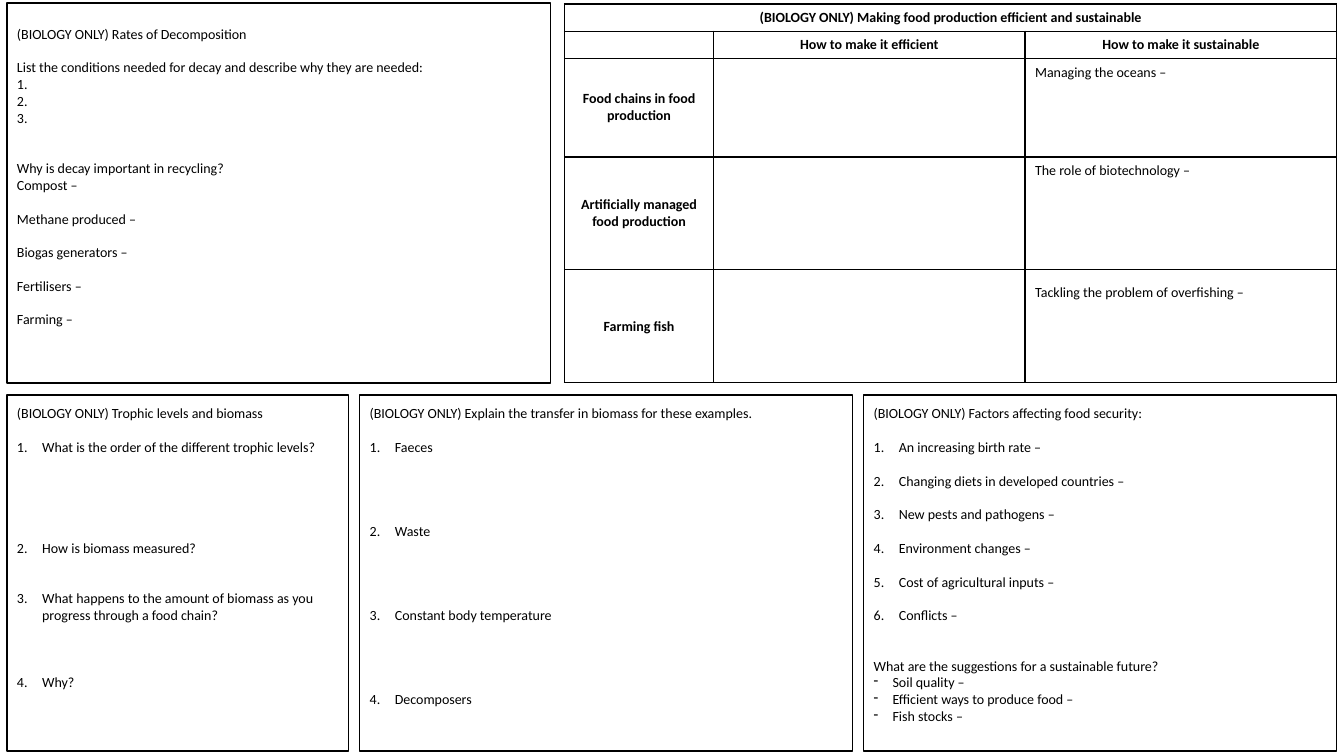
"""Build a biology revision slide with four question panels and a food production table."""
from lxml import etree
from pptx import Presentation
from pptx import util as u
from pptx.dml import color
from pptx.enum import shapes, text
from pptx.oxml import ns

BLACK, WHITE = "000000", "FFFFFF"
FONT = {"name": "Calibri", "size": u.Pt(10)}
LINE, PANEL_LINES = 12, 20
LEFT, RIGHT = 5.04, 954.7
UPPER = {"top": 2.2, "height": 271.4}
LOWER = {"top": 282.2, "height": 254.2}

BULLETS = {
    "number": (18, "a:buAutoNum", {"type": "arabicPeriod"}),
    "dash": (13.5, "a:buChar", {"char": "-"}),
}

# Each panel line: blank lines above it, bullet, wording
FACTORS = [
    (0, None, "(BIOLOGY ONLY) Factors affecting food security:"),
    (1, "number", "An increasing birth rate –"),
    (1, "number", "Changing diets in developed countries –"),
    (1, "number", "New pests and pathogens –"),
    (1, "number", "Environment changes –"),
    (1, "number", "Cost of agricultural inputs –"),
    (1, "number", "Conflicts –"),
    (2, None, "What are the suggestions for a sustainable future?"),
    (0, "dash", "Soil quality –"),
    (0, "dash", "Efficient ways to produce food –"),
    (0, "dash", "Fish stocks –"),
]
DECOMPOSITION = [
    (0, None, "(BIOLOGY ONLY) Rates of Decomposition"),
    (1, None, "List the conditions needed for decay and describe why they are needed:"),
    (0, None, "1."),
    (0, None, "2."),
    (0, None, "3."),
    (2, None, "Why is decay important in recycling?"),
    (0, None, "Compost –"),
    (1, None, "Methane produced –"),
    (1, None, "Biogas generators –"),
    (1, None, "Fertilisers –"),
    (1, None, "Farming –"),
]
TROPHIC = [
    (0, None, "(BIOLOGY ONLY) Trophic levels and biomass"),
    (1, "number", "What is the order of the different trophic levels?"),
    (5, "number", "How is biomass measured?"),
    (2, "number", "What happens to the amount of biomass as you progress through a food chain?"),
    (3, "number", "Why?"),
]
TRANSFER = [
    (0, None, "(BIOLOGY ONLY) Explain the transfer in biomass for these examples."),
    (1, "number", "Faeces"),
    (4, "number", "Waste"),
    (4, "number", "Constant body temperature"),
    (4, "number", "Decomposers"),
]
FOOD_PRODUCTION = [
    ("(BIOLOGY ONLY) Making food production efficient and sustainable", "", ""),
    ("", "How to make it efficient", "How to make it sustainable"),
    ("Food chains in food production", "", "Managing the oceans –"),
    ("Artificially managed food production", "", "The role of biotechnology –"),
    ("Farming fish", "", "Tackling the problem of overfishing –"),
]
HEADER_ROWS = 2
COLUMN_WIDTHS = [106.5, 222.5, 222.5]
ROW_HEIGHTS = [19.3, 19.3, 70.6, 80.6, 80.6]
PROMPT_MARGINS = {2: 4, 3: 4, 4: 10}


def rgb(value):
    return color.RGBColor.from_string(value)


def apply(target, values):
    for name, value in values.items():
        setattr(target, name, value)


def write(paragraph, wording, bold=False):
    run = paragraph.add_run()
    run.text = wording
    apply(run.font, {**FONT, "bold": bold})
    run.font.color.rgb = rgb(BLACK)


def add_bullet(paragraph, kind):
    indent, tag, values = BULLETS[kind]
    properties = paragraph._p.get_or_add_pPr()
    properties.set("marL", str(u.Pt(indent)))
    properties.set("indent", str(-u.Pt(indent)))
    etree.SubElement(properties, ns.qn(tag), values)


def add_panel(slide, lines, left, width, band, fill=None):
    top, height = band["top"], band["height"]
    panel = slide.shapes.add_shape(
        shapes.MSO_SHAPE.RECTANGLE, u.Pt(left), u.Pt(top), u.Pt(width), u.Pt(height))
    panel.shadow.inherit = False
    if fill:
        panel.fill.solid()
        panel.fill.fore_color.rgb = rgb(fill)
    else:
        panel.fill.background()
    panel.line.color.rgb = rgb(BLACK)
    panel.line.width = u.Pt(1)
    frame = panel.text_frame
    apply(frame, {
        "word_wrap": True,
        "vertical_anchor": text.MSO_ANCHOR.TOP,
        "margin_top": u.Pt((height - PANEL_LINES * LINE) / 2),
        "margin_bottom": 0,
    })
    for index, (blanks, bullet, wording) in enumerate(lines):
        paragraph = frame.add_paragraph() if index else frame.paragraphs[0]
        apply(paragraph, {"alignment": text.PP_ALIGN.LEFT, "space_before": u.Pt(blanks * LINE)})
        if bullet:
            add_bullet(paragraph, bullet)
        write(paragraph, wording)


def add_borders(cell):
    properties = cell._tc.get_or_add_tcPr()
    for side in ("a:lnL", "a:lnR", "a:lnT", "a:lnB"):
        border = etree.SubElement(properties, ns.qn(side), {"w": str(u.Pt(1))})
        stroke = etree.SubElement(border, ns.qn("a:solidFill"))
        etree.SubElement(stroke, ns.qn("a:srgbClr"), {"val": BLACK})


def add_food_table(slide, left, top):
    food = slide.shapes.add_table(
        len(ROW_HEIGHTS), len(COLUMN_WIDTHS), u.Pt(left), u.Pt(top),
        u.Pt(sum(COLUMN_WIDTHS)), u.Pt(sum(ROW_HEIGHTS))).table
    apply(food, {"first_row": False, "horz_banding": False})
    for column, width in zip(food.columns, COLUMN_WIDTHS):
        column.width = u.Pt(width)
    for row, height in zip(food.rows, ROW_HEIGHTS):
        row.height = u.Pt(height)
    for r, wordings in enumerate(FOOD_PRODUCTION):
        for c, wording in enumerate(wordings):
            cell = food.cell(r, c)
            add_borders(cell)
            cell.fill.background()
            paragraph = cell.text_frame.paragraphs[0]
            if not wording:
                etree.SubElement(paragraph._p, ns.qn("a:endParaRPr"), {"sz": "1000"})
                continue
            prompt = r >= HEADER_ROWS and c == 2
            write(paragraph, wording, bold=not prompt)
            if prompt:
                apply(cell, {"vertical_anchor": text.MSO_ANCHOR.TOP,
                             "margin_top": u.Pt(PROMPT_MARGINS[r])})
            else:
                cell.vertical_anchor = text.MSO_ANCHOR.MIDDLE
                paragraph.alignment = text.PP_ALIGN.CENTER
    food.cell(0, 0).merge(food.cell(0, 2))


def main():
    deck = Presentation()
    apply(deck, {"slide_width": u.Pt(960), "slide_height": u.Pt(540)})
    slide = deck.slides.add_slide(deck.slide_layouts[6])
    add_panel(slide, FACTORS, RIGHT - 337.7, 337.7, LOWER)
    add_food_table(slide, RIGHT - sum(COLUMN_WIDTHS), 2.9)
    add_panel(slide, DECOMPOSITION, LEFT, 388.1, UPPER, WHITE)
    add_panel(slide, TROPHIC, LEFT, 244.1, LOWER)
    add_panel(slide, TRANSFER, 257, 352.1, LOWER)
    deck.save("out.pptx")


if __name__ == "__main__":
    main()
